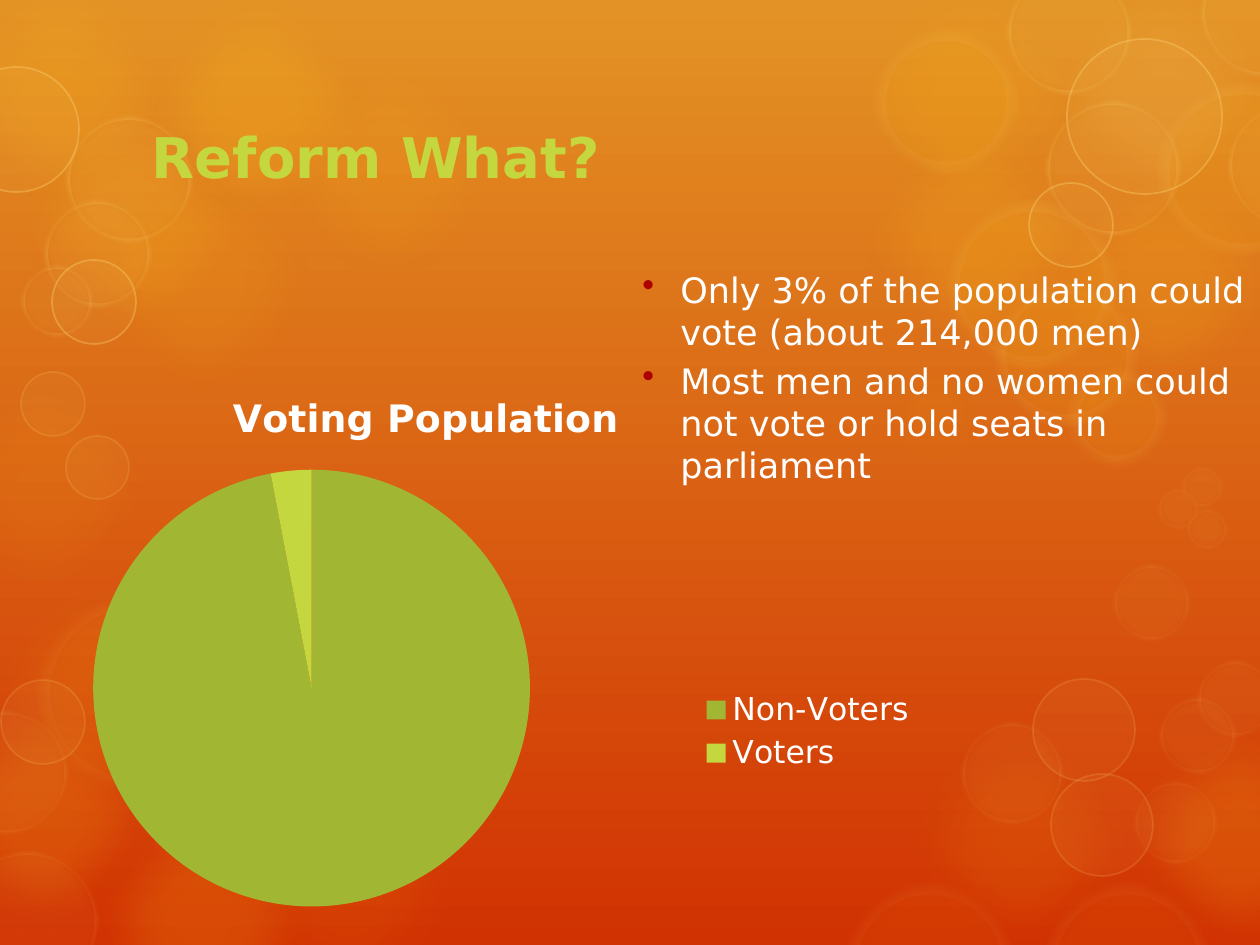
from lxml import etree
from pptx import Presentation
from pptx import util as u
from pptx.chart.data import CategoryChartData
from pptx.dml.color import RGBColor
from pptx.enum import chart as charts, shapes, text
from pptx.oxml import parse_xml
from pptx.oxml.ns import nsdecls, qn

PX = 914400 // 126
FONT = "DejaVu Sans"
COLORS = {
    "sky": "E39325", "ground": "D13202", "amber": "FDC61B", "cream": "FFE281",
    "rim": "FEEBAE", "lime": "C4D73F", "green": "A1B633", "white": "FFFFFF",
    "bullet": "AD0101",
}


def paint(color_format, name, alpha=None):
    color_format.rgb = RGBColor.from_string(COLORS[name])
    if alpha is not None:
        element = color_format._xFill.find(qn("a:srgbClr"))
        etree.SubElement(element, qn("a:alpha"), val=str(alpha * 1000))


def add_bubble(left, top, size, fill, alpha, rim, soft):
    shape = slide.shapes.add_shape(
        shapes.MSO_SHAPE.OVAL, left * PX, top * PX, size * PX, size * PX)
    shape.shadow.inherit = False
    shape.fill.solid()
    paint(shape.fill.fore_color, fill, alpha)
    if rim:
        name, width, rim_alpha = rim
        shape.line.width = u.Pt(width)
        shape.line.fill.solid()
        paint(shape.line.color, name, rim_alpha)
    else:
        shape.line.fill.background()
    if soft:
        effects = shape._element.spPr.find(qn("a:effectLst"))
        etree.SubElement(effects, qn("a:softEdge"), rad=str(u.Pt(soft)))


presentation = Presentation()
presentation.slide_width = 1260 * PX
presentation.slide_height = 945 * PX
slide = presentation.slides.add_slide(presentation.slide_layouts[5])

# Background gradient, top to bottom
background = slide.background.fill
background.gradient()
background.gradient_angle = 270
for stop, name, position in zip(background.gradient_stops, ("sky", "ground"), (0, 1)):
    stop.color.rgb = RGBColor.from_string(COLORS[name])
    stop.position = position

# Bubbles: fill, opacity, rim (colour, points, opacity), soft edge, (left, top, size)
GLOW = 263
bubble_groups = [
    # Blurred glows
    ("amber", 8, None, 25, [(-33, 557, GLOW), (97, 660, GLOW), (218, 751, GLOW),
                            (-88, 355, GLOW)]),
    ("amber", 10, None, 25, [(72, 151, GLOW), (258, 39, GLOW), (843, -37, GLOW),
                             (890, 708, GLOW), (851, 330, 168)]),
    ("amber", 15, None, 25, [(-71, -40, GLOW), (0, 91, GLOW), (1033, 151, GLOW),
                             (843, 108, GLOW)]),
    ("amber", 16, None, 25, [(72, 790, GLOW), (1110, 708, GLOW), (-87, 682, GLOW)]),
    ("amber", 20, None, 25, [(127, -23, GLOW)]),
    ("cream", 10, None, 25, [(1033, -40, GLOW)]),
    # Halos with a wide, faint rim
    ("amber", 10, ("rim", 14, 6), 8, [
        (1157, 82, 173), (874, 29, 144), (948, 200, 168), (994, 282, 144),
        (1067, 367, 100)]),
    ("amber", 6, ("rim", 14, 4), 8, [
        (38, 596, 193), (844, 883, 171), (1043, 883, 168)]),
    # Rings
    ("cream", 5, ("cream", 5, 15), 4, [
        (-44, 851, 142), (-55, 711, 123), (961, 722, 102), (1134, 781, 83),
        (1113, 564, 77), (1159, 697, 77), (1197, 660, 77), (1181, 466, 42),
        (1157, 488, 42), (1186, 508, 42)]),
    ("cream", 5, ("cream", 5, 30), 4, [
        (66, 116, 126), (44, 200, 107), (21, 265, 72), (1007, -30, 124),
        (1201, -50, 126), (1228, 103, 125), (1046, 101, 134)]),
    ("cream", 5, ("cream", 1, 15), 0, [
        (1, 680, 84), (1051, 774, 102), (1033, 679, 102), (21, 372, 64), (66, 436, 63)]),
    ("cream", 5, ("cream", 1, 30), 0, [
        (-46, 67, 125), (52, 260, 84), (1067, 39, 155), (1029, 183, 84)]),
]
for fill, alpha, rim, soft, circles in bubble_groups:
    for left, top, size in circles:
        add_bubble(left, top, size, fill, alpha, rim, soft)

# Title, brought in front of the bubbles
title = slide.shapes.title
slide.shapes._spTree.append(title._element)
title.left, title.top, title.width, title.height = 139 * PX, 93 * PX, 981 * PX, 127 * PX
title.text_frame.text = "Reform What?"
title.text_frame.vertical_anchor = text.MSO_ANCHOR.MIDDLE
paragraph = title.text_frame.paragraphs[0]
paragraph.alignment = text.PP_ALIGN.LEFT
paragraph.font.name, paragraph.font.size, paragraph.font.bold = FONT, u.Pt(32), True
paint(paragraph.font.color, "lime")

# Pie chart
data = CategoryChartData()
data.categories = ["Non-Voters", "Voters"]
data.add_series("Voting Population", (97, 3))
chart = slide.shapes.add_chart(
    charts.XL_CHART_TYPE.PIE, -94 * PX, 368 * PX, 1040 * PX, 557 * PX, data).chart
chart.font.name, chart.font.size = FONT, u.Pt(18)
paint(chart.font.color, "white")
chart.has_title = True
chart.chart_title.text_frame.text = "Voting Population"
title_font = chart.chart_title.text_frame.paragraphs[0].font
title_font.name, title_font.size, title_font.bold = FONT, u.Pt(21.6), True
paint(title_font.color, "white")
chart.has_legend = True
chart.legend.position = charts.XL_LEGEND_POSITION.RIGHT
chart.legend.include_in_layout = False
plot = chart.plots[0]
plot.vary_by_categories = True
for index, name in enumerate(("green", "lime")):
    point_format = plot.series[0].points[index].format
    point_format.fill.solid()
    paint(point_format.fill.fore_color, name)
    point_format.line.fill.background()

# Fixed places of the pie and the legend within the chart
plot_area = chart._chartSpace.chart.plotArea
for layout in plot_area.findall(qn("c:layout")):
    plot_area.remove(layout)
plot_area.insert(0, parse_xml(
    f'<c:layout {nsdecls("c")}><c:manualLayout><c:layoutTarget val="inner"/>'
    '<c:xMode val="edge"/><c:yMode val="edge"/><c:x val="0.18"/><c:y val="0.18"/>'
    '<c:w val="0.42"/><c:h val="0.79"/></c:manualLayout></c:layout>'))
legend_layout = parse_xml(
    f'<c:layout {nsdecls("c")}><c:manualLayout><c:xMode val="edge"/>'
    '<c:yMode val="edge"/><c:x val="0.76"/><c:y val="0.57"/></c:manualLayout></c:layout>')
chart.legend._element.find(qn("c:legendPos")).addnext(legend_layout)

# Bulleted facts
facts = slide.shapes.add_textbox(630 * PX, 262 * PX, 630 * PX, 276 * PX).text_frame
facts.word_wrap = True
facts.text = ("Only 3% of the population could vote (about 214,000 men)\n"
              "Most men and no women could not vote or hold seats in parliament")
for paragraph in facts.paragraphs:
    paragraph.font.name, paragraph.font.size = FONT, u.Pt(20)
    paint(paragraph.font.color, "white")
    paragraph.space_before = u.Pt(4)
    properties = paragraph._p.get_or_add_pPr()
    properties.set("marL", str(38 * PX))
    properties.set("indent", str(-38 * PX))
    bullet_color = parse_xml(f'<a:buClr {nsdecls("a")}><a:srgbClr val="{COLORS["bullet"]}"/></a:buClr>')
    bullet = parse_xml(f'<a:buChar {nsdecls("a")} char="•"/>')
    properties.find(qn("a:spcBef")).addnext(bullet_color)
    bullet_color.addnext(bullet)

presentation.save("out.pptx")
